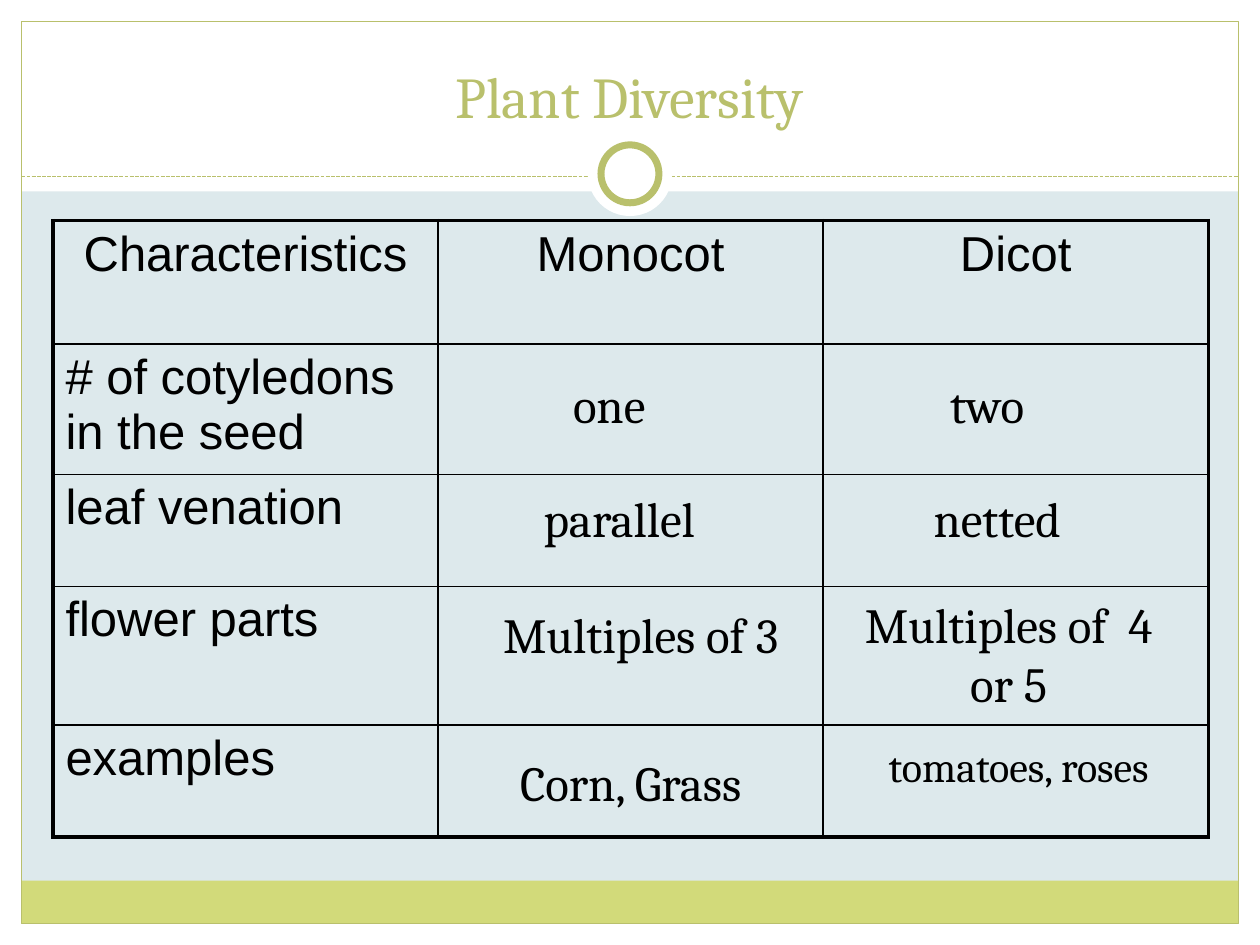
from lxml.etree import SubElement
from pptx import Presentation
from pptx.dml.color import RGBColor
from pptx.enum.dml import MSO_LINE
from pptx.enum.shapes import MSO_CONNECTOR, MSO_SHAPE
from pptx.enum.text import MSO_ANCHOR, PP_ALIGN
from pptx.oxml.ns import qn
from pptx.util import Inches, Pt

PALE_BLUE, WHITE, BLACK = "DDE9EC", "FFFFFF", "000000"
OLIVE, LIME = "B9C06C", "D2DA7A"
HEADINGS = ["Characteristics", "Monocot", "Dicot"]
TRAITS = ["# of cotyledons in the seed", "leaf venation", "flower parts", "examples"]
ROW_HEIGHTS = [0.98, 1.02, 0.89, 1.1, 0.89]
ANSWERS = [
    ("one", 3.5, 1.17, 1.83, 0.57, 28),
    ("two", 6.5, 1.17, 1.83, 0.57, 28),
    ("parallel", 3.41, 2.08, 2.17, 0.57, 28),
    ("netted", 6.58, 2.08, 1.83, 0.57, 28),
    ("Multiples of 3", 3.33, 3, 2.67, 0.57, 28),
    ("Multiples of  4 or 5", 6.25, 2.92, 2.67, 1.04, 28),
    ("Corn, Grass", 3.25, 4.17, 2.67, 0.57, 28),
    ("tomatoes, roses", 6.25, 4.08, 2.83, 0.5, 24),
]


def paint(color_format, color):
    """Apply a hex colour to a fill, line or font colour."""
    color_format.rgb = RGBColor.from_string(color)


def add_panel(slide, kind, left, top, width, height, fill=None, line=None, weight=0.75):
    """Add a preset shape with an optional fill and outline."""
    panel = slide.shapes.add_shape(
        kind, Inches(left), Inches(top), Inches(width), Inches(height))
    panel.shadow.inherit = False
    if fill:
        panel.fill.solid()
        paint(panel.fill.fore_color, fill)
    else:
        panel.fill.background()
    if line:
        paint(panel.line.color, line)
        panel.line.width = Pt(weight)
    else:
        panel.line.fill.background()


def style(paragraph, font_name, size, color, align):
    """Set the font and alignment of a paragraph."""
    paragraph.alignment = align
    paragraph.font.name = font_name
    paragraph.font.size = Pt(size)
    paint(paragraph.font.color, color)


def add_label(slide, text, left, top, width, height, size, color=BLACK,
              anchor=MSO_ANCHOR.TOP):
    """Add centred Cambria text in a wrapping box."""
    label = slide.shapes.add_textbox(
        Inches(left), Inches(top), Inches(width), Inches(height)).text_frame
    label.word_wrap = True
    label.vertical_anchor = anchor
    label.text = text
    style(label.paragraphs[0], "Cambria", size, color, PP_ALIGN.CENTER)


def add_frame(slide, width, height, margin=0.17):
    """Draw the white margins, footer band, outline and ring divider."""
    inner_width, center, divider_y = width - 2 * margin, width / 2, 1.4
    for box in [
        (0, height - margin, width, margin),
        (0, 0, width, 1.52),
        (0, 0, margin, height),
        (width - margin, 0, margin, height),
    ]:
        add_panel(slide, MSO_SHAPE.RECTANGLE, *box, fill=WHITE)
    add_panel(slide, MSO_SHAPE.RECTANGLE, margin, height - margin - 0.34,
              inner_width, 0.34, fill=LIME)
    add_panel(slide, MSO_SHAPE.RECTANGLE, margin, margin,
              inner_width, height - 2 * margin, line=OLIVE)
    divider = slide.shapes.add_connector(
        MSO_CONNECTOR.STRAIGHT, Inches(margin), Inches(divider_y),
        Inches(width - margin), Inches(divider_y))
    paint(divider.line.color, OLIVE)
    divider.line.width = Pt(0.75)
    divider.line.dash_style = MSO_LINE.SQUARE_DOT
    SubElement(divider._element.spPr, qn("a:effectLst"))
    for diameter, outline in [(0.67, None), (0.46, OLIVE)]:
        add_panel(slide, MSO_SHAPE.OVAL, center - diameter / 2, 1.38 - diameter / 2,
                  diameter, diameter, fill=WHITE, line=outline, weight=4)


def set_borders(cell, weights):
    """Give a cell black borders, with weights keyed by side tag."""
    properties = cell._tc.get_or_add_tcPr()
    for position, (side, weight) in enumerate(weights.items()):
        border = properties.makeelement(qn(f"a:{side}"), {"w": str(Pt(weight))})
        fill = SubElement(border, qn("a:solidFill"))
        SubElement(fill, qn("a:srgbClr"), val=BLACK)
        properties.insert(position, border)


def add_comparison(slide, left, top, width):
    """Place the comparison table and the answers laid over it."""
    row_count, column_count = len(ROW_HEIGHTS), len(HEADINGS)
    table = slide.shapes.add_table(
        row_count, column_count, Inches(left), Inches(top),
        Inches(width), Inches(sum(ROW_HEIGHTS))).table
    table.first_row = table.horz_banding = False
    for column in table.columns:
        column.width = Inches(width / column_count)
    contents = [HEADINGS] + [[trait, "", ""] for trait in TRAITS]
    for r, (height, texts) in enumerate(zip(ROW_HEIGHTS, contents)):
        table.rows[r].height = Inches(height)
        for c, text in enumerate(texts):
            cell = table.cell(r, c)
            cell.text = text
            cell.fill.background()
            style(cell.text_frame.paragraphs[0], "Arial", 28, BLACK,
                  PP_ALIGN.LEFT if r else PP_ALIGN.CENTER)
            outer = {"lnL": c == 0, "lnR": c == column_count - 1,
                     "lnT": r == 0, "lnB": r == row_count - 1}
            set_borders(cell, {side: 2.25 if edge else 1 for side, edge in outer.items()})
    for text, dx, dy, answer_width, answer_height, size in ANSWERS:
        add_label(slide, text, left + dx, top + dy, answer_width, answer_height, size)


def main():
    """Build and save the plant diversity slide."""
    deck = Presentation()
    deck.slide_width, deck.slide_height = Inches(10), Inches(7.5)
    slide = deck.slides.add_slide(deck.slide_layouts[6])
    slide.background.fill.solid()
    paint(slide.background.fill.fore_color, PALE_BLUE)
    add_frame(slide, 10, 7.5)
    add_label(slide, "Plant Diversity", 0.33, 0.25, 9.33, 0.83, 33, OLIVE,
              MSO_ANCHOR.BOTTOM)
    add_comparison(slide, 0.42, 1.75, 9.17)
    deck.save("out.pptx")


if __name__ == "__main__":
    main()
